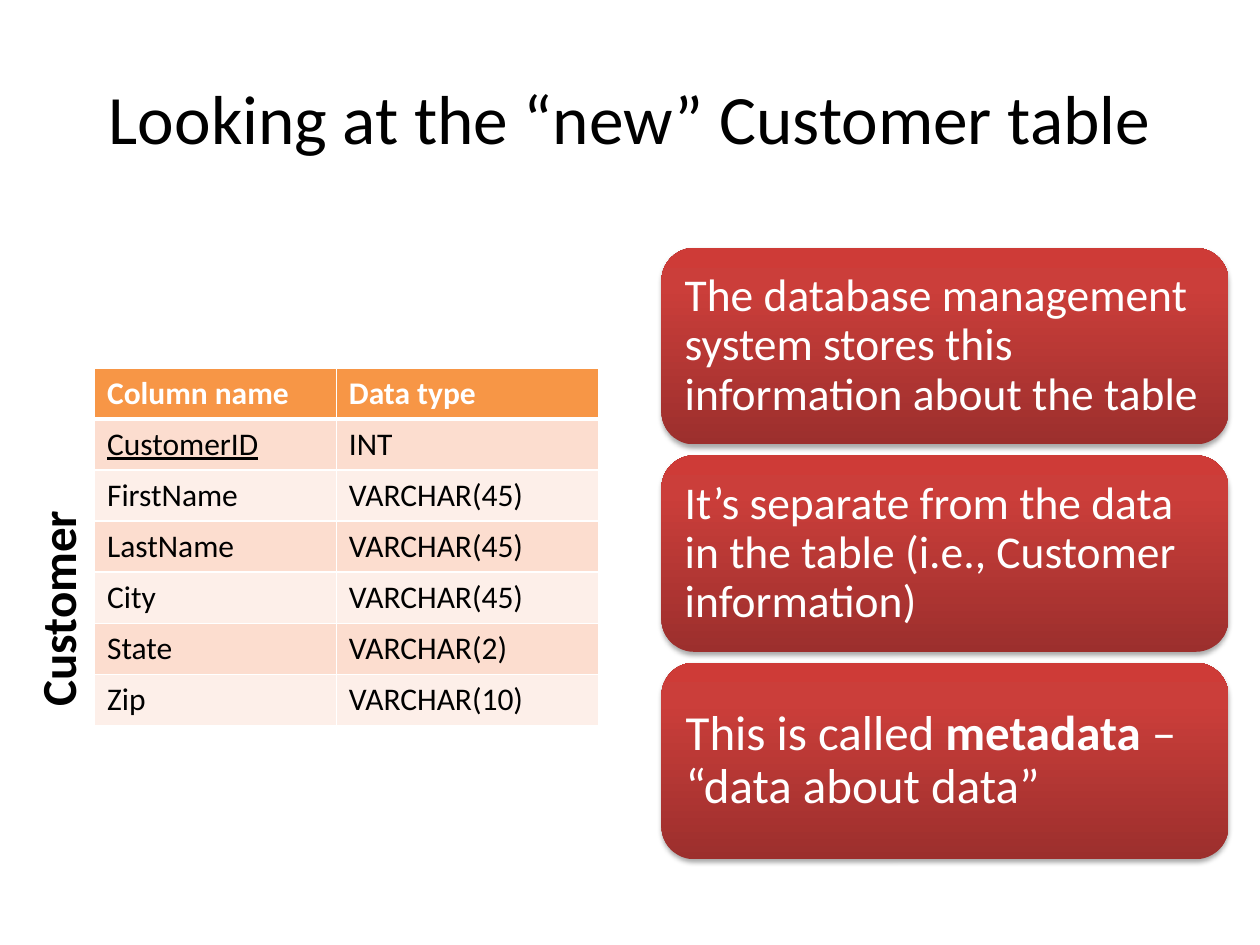
from copy import deepcopy
from dataclasses import dataclass

from lxml import etree
from pptx import Presentation
from pptx.dml.color import RGBColor
from pptx.enum.shapes import MSO_SHAPE
from pptx.enum.text import MSO_ANCHOR, PP_ALIGN
from pptx.oxml.ns import qn
from pptx.util import Pt

ROUNDED = MSO_SHAPE.ROUNDED_RECTANGLE
MIDDLE = MSO_ANCHOR.MIDDLE
LEFT, CENTER = PP_ALIGN.LEFT, PP_ALIGN.CENTER


@dataclass(frozen=True)
class Theme:
    font: str = "Calibri"
    black: str = "000000"
    white: str = "FFFFFF"
    header: str = "F79646"
    bands: tuple = ("FCDDCF", "FDEFE9")
    gradient: tuple = ((0, "9C2F2D"), (0.8, "CB3E3A"), (1, "CE3B37"))
    title_size: float = 39.6
    label_size: float = 28
    table_size: float = 18


@dataclass(frozen=True)
class Run:
    text: str
    bold: bool = False
    underline: bool = False


@dataclass(frozen=True)
class Frame:
    left: float
    top: float
    width: float
    height: float

    def lengths(self):
        return Pt(self.left), Pt(self.top), Pt(self.width), Pt(self.height)


@dataclass(frozen=True)
class Card:
    size: float
    runs: tuple


THEME = Theme()
TITLE_FRAME = Frame(36, 21.6, 648, 90)
LABEL_FRAME = Frame(-41, 316.8, 147, 41)
TABLE_FRAME = Frame(54, 210.2, 288, 204.4)
COLUMN_WIDTHS = (138.2, 149.8)
FIRST_CARD = Frame(378, 141.7, 324, 112.3)
CARD_PITCH = 118.5

COLUMNS = (
    ("Column name", "Data type"),
    ("CustomerID", "INT"),
    ("FirstName", "VARCHAR(45)"),
    ("LastName", "VARCHAR(45)"),
    ("City", "VARCHAR(45)"),
    ("State", "VARCHAR(2)"),
    ("Zip", "VARCHAR(10)"),
)
PRIMARY_KEY = "CustomerID"

CARDS = (
    Card(26, (Run("The database management system stores this information about the table"),)),
    Card(26, (Run("It’s separate from the data in the table (i.e., Customer information)"),)),
    Card(28, (Run("This is called "), Run("metadata", bold=True), Run(" – “data about data”"))),
)


def write(text_frame, runs: tuple, size: float, color: str, align=LEFT) -> None:
    para = text_frame.paragraphs[0]
    para.alignment = align
    for run in runs:
        span = para.add_run()
        span.text = run.text
        span.font.name = THEME.font
        span.font.size = Pt(size)
        span.font.bold = run.bold
        span.font.underline = run.underline
        span.font.color.rgb = RGBColor.from_string(color)


def add_text(page, frame: Frame, run: Run, size: float, align=LEFT):
    box = page.shapes.add_textbox(*frame.lengths())
    box.text_frame.word_wrap = True
    write(box.text_frame, (run,), size, THEME.black, align)
    return box


def set_borders(cell, bottom_width: float) -> None:
    """Draw white cell borders; they must come before the fill in the XML."""
    properties = cell._tc.get_or_add_tcPr()
    widths = {"a:lnL": 1, "a:lnR": 1, "a:lnT": 1, "a:lnB": bottom_width}
    for position, (tag, width) in enumerate(widths.items()):
        line = etree.Element(qn(tag), w=str(Pt(width)))
        fill = etree.SubElement(line, qn("a:solidFill"))
        etree.SubElement(fill, qn("a:srgbClr"), val=THEME.white)
        properties.insert(position, line)


def add_column_table(page) -> None:
    table = page.shapes.add_table(
        len(COLUMNS), len(COLUMN_WIDTHS), *TABLE_FRAME.lengths()
    ).table
    for column, width in zip(table.columns, COLUMN_WIDTHS):
        column.width = Pt(width)
    for row_index, row in enumerate(COLUMNS):
        is_header = row_index == 0
        background = THEME.header if is_header else THEME.bands[(row_index - 1) % 2]
        color = THEME.white if is_header else THEME.black
        for column_index, text in enumerate(row):
            cell = table.cell(row_index, column_index)
            cell.fill.solid()
            cell.fill.fore_color.rgb = RGBColor.from_string(background)
            set_borders(cell, 3 if is_header else 1)
            run = Run(text, bold=is_header, underline=text == PRIMARY_KEY)
            write(cell.text_frame, (run,), THEME.table_size, color)


def fill_gradient(shape) -> None:
    shape.fill.gradient()
    shape.fill.gradient_angle = 90
    stop_list = shape._element.spPr.find(".//" + qn("a:gsLst"))
    stop_list.append(deepcopy(stop_list[-1]))
    for stop, (position, color) in zip(shape.fill.gradient_stops, THEME.gradient):
        stop.position = position
        stop.color.rgb = RGBColor.from_string(color)


def add_soft_shadow(shape) -> None:
    shape.shadow.inherit = False
    effects = shape._element.spPr.find(qn("a:effectLst"))
    shadow = etree.SubElement(
        effects, qn("a:outerShdw"), blurRad=str(Pt(3.1)), dist=str(Pt(1.8)),
        dir="5400000", rotWithShape="0",
    )
    color = etree.SubElement(shadow, qn("a:srgbClr"), val=THEME.black)
    etree.SubElement(color, qn("a:alpha"), val="35000")


def add_card(page, frame: Frame, card: Card) -> None:
    shape = page.shapes.add_shape(ROUNDED, *frame.lengths())
    fill_gradient(shape)
    shape.line.fill.background()
    add_soft_shadow(shape)
    text_frame = shape.text_frame
    text_frame.word_wrap = True
    text_frame.vertical_anchor = MIDDLE
    inset = Pt(0.3 * card.size)
    text_frame.margin_left = text_frame.margin_right = inset
    text_frame.margin_top = text_frame.margin_bottom = inset
    write(text_frame, card.runs, card.size, THEME.white)
    text_frame.paragraphs[0].line_spacing = 0.9


def main() -> None:
    deck = Presentation()
    deck.slide_width, deck.slide_height = Pt(720), Pt(540)
    page = deck.slides.add_slide(deck.slide_layouts[6])

    title = add_text(page, TITLE_FRAME, Run("Looking at the “new” Customer table"),
                     THEME.title_size, CENTER)
    title.text_frame.vertical_anchor = MIDDLE

    add_column_table(page)
    label = add_text(page, LABEL_FRAME, Run("Customer", bold=True), THEME.label_size)
    label.rotation = 270

    for index, card in enumerate(CARDS):
        top = FIRST_CARD.top + index * CARD_PITCH
        add_card(page, Frame(FIRST_CARD.left, top, FIRST_CARD.width, FIRST_CARD.height), card)

    deck.save("out.pptx")


if __name__ == "__main__":
    main()
